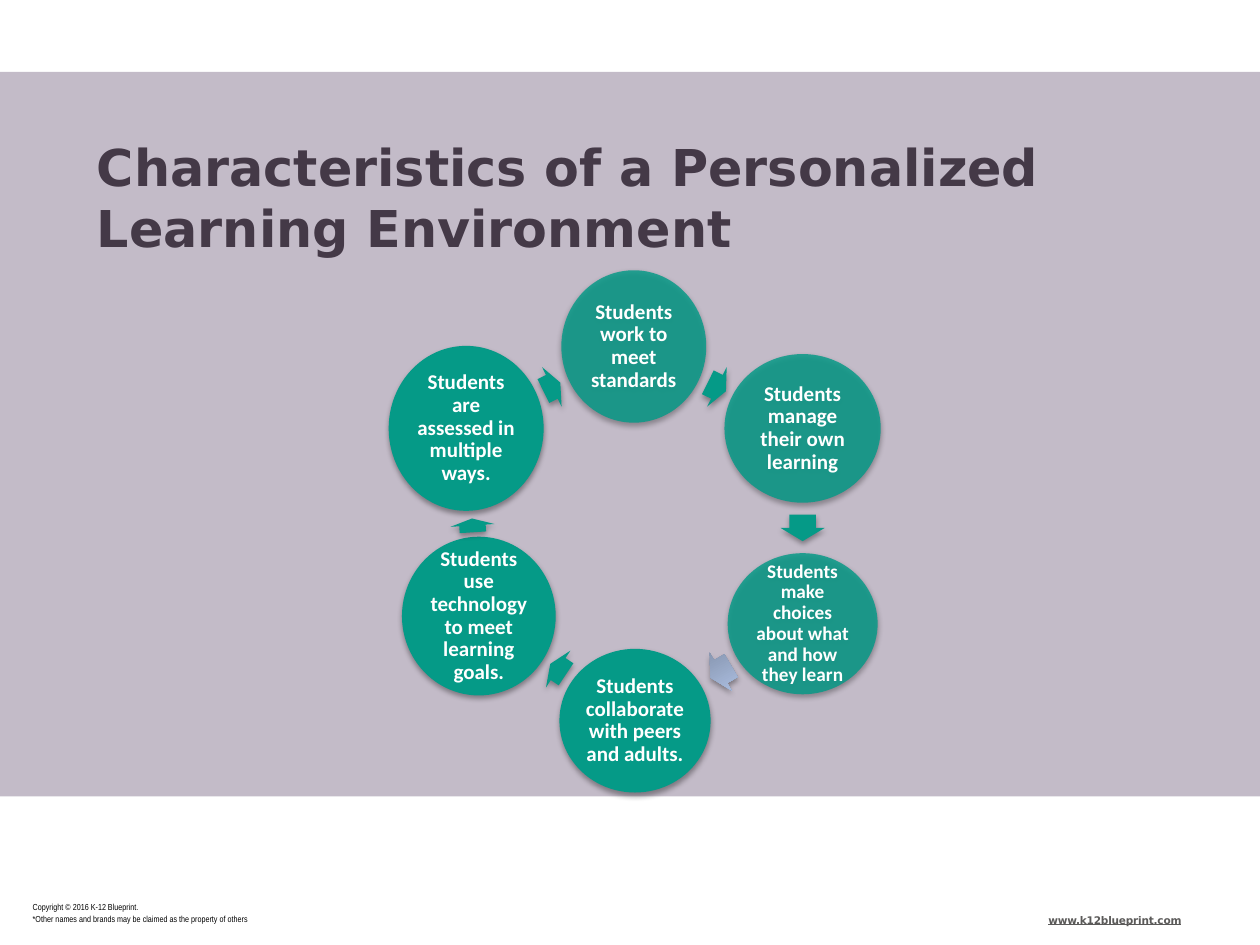
from dataclasses import dataclass
from lxml import etree
from pptx import Presentation, util as u
from pptx.dml.color import RGBColor
from pptx.enum import shapes, text
from pptx.oxml.ns import qn


@dataclass(frozen=True)
class Theme:
    band: str = "C3BBC8"
    teal: str = "059A87"
    dusk: str = "818FA8"
    haze: str = "A7B9DA"
    plum: str = "443947"
    white: str = "FFFFFF"
    black: str = "000000"
    gray: str = "5B5A59"
    head: int = 29
    label: int = 12
    dense: int = 11
    link: int = 6
    note: int = 5
    sans: str = "DejaVu Sans"
    body: str = "Calibri"
    thin: str = "Arial Narrow"


class Deck:
    cols, rows = 10, 7.5

    def __init__(self, theme):
        self.theme = theme
        self.show = Presentation()
        self.show.slide_width = u.Inches(10)
        self.show.slide_height = u.Inches(7.5)
        self.slide = self.show.slides.add_slide(self.show.slide_layouts[6])

    def box(self, x, y, w, h):
        col = self.show.slide_width / self.cols
        row = self.show.slide_height / self.rows
        return [round(n) for n in (x * col, y * row, w * col, h * row)]

    def shape(self, kind, area, color):
        item = self.slide.shapes.add_shape(kind, *self.box(*area))
        item.shadow.inherit = False
        item.fill.solid()
        item.fill.fore_color.rgb = RGBColor.from_string(color)
        item.line.fill.background()
        return item

    def shade(self, item):
        effects = item.element.spPr.find(qn("a:effectLst"))
        drop = etree.SubElement(effects, qn("a:outerShdw"), blurRad=str(u.Pt(3.1)),
                                dist=str(u.Pt(1.8)), dir="5400000", rotWithShape="0")
        tone = etree.SubElement(drop, qn("a:srgbClr"), val=self.theme.black)
        etree.SubElement(tone, qn("a:alpha"), val="35000")

    def letter(self, item, lines, size, face, color, bold=False, inset=0,
               align=None, space=None, under=None, track=None):
        frame = item.text_frame
        frame.word_wrap = True
        frame.margin_left = frame.margin_right = u.Inches(inset)
        frame.margin_top = frame.margin_bottom = u.Inches(inset)
        for i, line in enumerate(lines):
            para = frame.add_paragraph() if i else frame.paragraphs[0]
            para.alignment = align
            para.line_spacing = space
            run = para.add_run()
            run.text = line
            font = run.font
            font.size, font.name = u.Pt(size), face
            font.bold, font.underline = bold, under
            font.color.rgb = RGBColor.from_string(color)
            if track is not None:
                run._r.get_or_add_rPr().set("spc", str(track))

    def label(self, area, lines, *style, **more):
        item = self.slide.shapes.add_textbox(*self.box(*area))
        self.letter(item, lines, *style, **more)

    def circle(self, x, y, w, h, words, size, alpha):
        item = self.shape(shapes.MSO_SHAPE.OVAL, (x - w / 2, y - h / 2, w, h),
                          self.theme.teal)
        if alpha < 100:
            tone = item.element.spPr.find(qn("a:solidFill"))[0]
            etree.SubElement(tone, qn("a:alpha"), val=str(alpha * 1000))
        self.shade(item)
        item.text_frame.vertical_anchor = text.MSO_ANCHOR.MIDDLE
        self.letter(item, [words], size, self.theme.body, self.theme.white, True,
                    inset=0.02, align=text.PP_ALIGN.CENTER, space=0.9)

    def arrow(self, x, y, w, turn, fade=False):
        h = 0.35
        item = self.shape(shapes.MSO_SHAPE.RIGHT_ARROW,
                          (x - w / 2, y - h / 2, w, h), self.theme.teal)
        item.adjustments[0], item.adjustments[1] = 0.6, 0.5
        item.rotation = turn
        if fade:
            item.fill.gradient()
            item.fill.gradient_angle = 90
            tones = (self.theme.dusk, 0), (self.theme.haze, 0.8)
            for stop, (color, place) in zip(item.fill.gradient_stops, tones):
                stop.color.rgb = RGBColor.from_string(color)
                stop.position = place
        self.shade(item)


def main():
    t = Theme()
    deck = Deck(t)
    deck.shape(shapes.MSO_SHAPE.RECTANGLE, (0, 0.57, 10, 5.75), t.band)
    deck.label((0.77, 1.08, 8.47, 0.98),
               ["Characteristics of a Personalized Learning Environment"],
               t.head, t.sans, t.plum, True)

    steps = [
        ((5.03, 2.75, 1.15, 1.21), "Students work to meet standards",
         t.label, 83, (5.69, 3.07, 0.16, 26.3)),
        ((6.37, 3.4, 1.24, 1.18), "Students manage their own learning",
         t.label, 83, (6.37, 4.19, 0.21, 90)),
        ((6.37, 4.95, 1.19, 1.12),
         "Students make choices about what and how they learn",
         t.dense, 83, (5.72, 5.33, 0.19, 149.9, True)),
        ((5.04, 5.72, 1.2, 1.14), "Students collaborate with peers and adults.",
         t.label, 100, (4.43, 5.31, 0.15, 213.6)),
        ((3.8, 4.89, 1.22, 1.26), "Students use technology to meet learning goals.",
         t.label, 100, (3.75, 4.17, 0.11, 266.3)),
        ((3.7, 3.4, 1.23, 1.31), "Students are assessed in multiple ways.",
         t.label, 100, (4.38, 3.07, 0.15, 333.7)),
    ]
    for place, words, size, alpha, arrow in steps:
        deck.circle(*place, words, size, alpha)
        deck.arrow(*arrow)

    deck.label((0.26, 7.14, 2.16, 0.2),
               ["Copyright © 2016 K-12 Blueprint.",
                "*Other names and brands may be claimed as the property of others"],
               t.note, t.thin, t.black, space=u.Pt(7.1))
    deck.label((8.32, 7.25, 1.3, 0.12), ["www.k12blueprint.com"],
               t.link, t.sans, t.gray, True, under=True, track=-10)
    deck.show.save("out.pptx")


if __name__ == "__main__":
    main()
